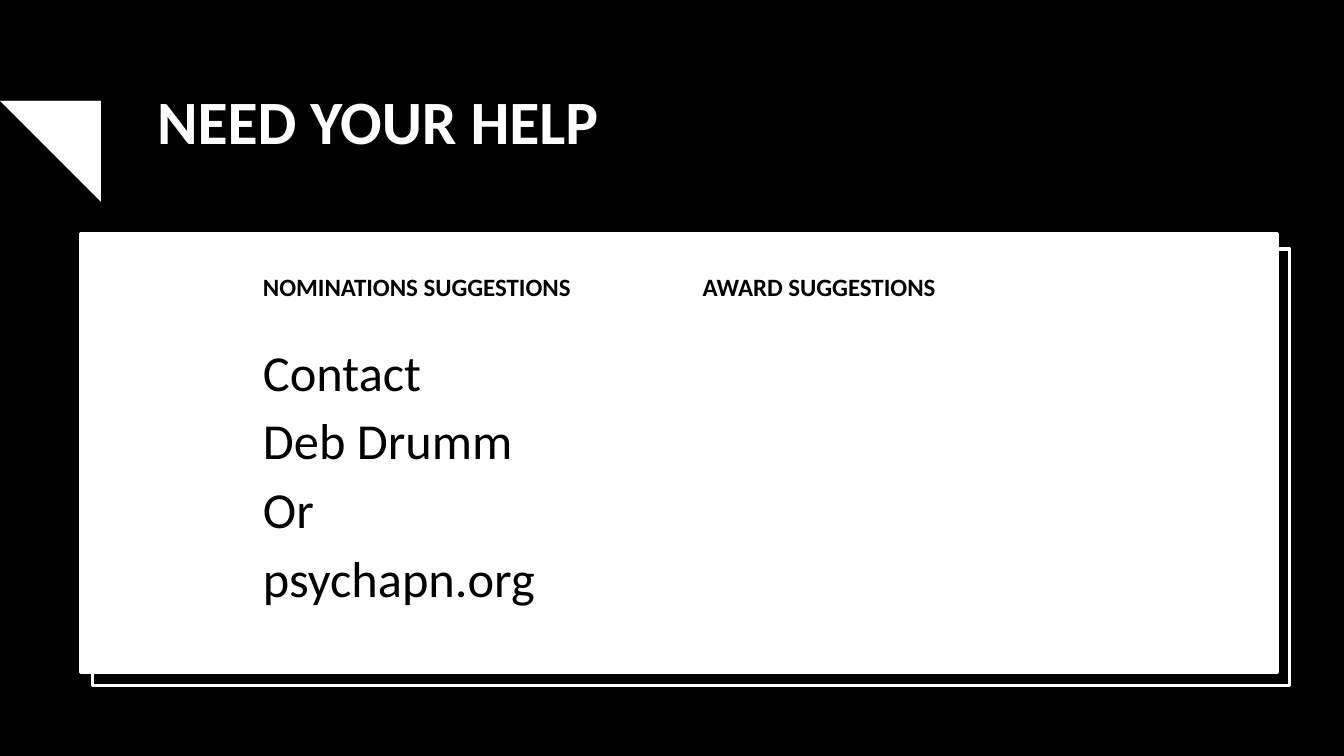
from pptx import Presentation
from pptx.dml.color import RGBColor
from pptx.enum.shapes import MSO_SHAPE as Preset
from pptx.enum.text import MSO_ANCHOR as Anchor
from pptx.util import Inches, Pt

BLACK = RGBColor(0, 0, 0)
WHITE = RGBColor(255, 255, 255)
FONT = "Calibri"
WIDTH, HEIGHT = 13.33, 7.5

TITLE = {"size": Pt(44), "bold": True}
HEADING = {"size": Pt(17.8), "bold": True}
BODY = {"size": Pt(36), "bold": False}

# Outline of one zigzag stripe, relative to its top left corner
PEAKS = (0.5, 1.01)
VALLEYS = (0.24, 0.75)
DEPTH, THICKNESS = 0.26, 0.045


def add_rectangle(page, box, fill, line=None):
    panel = page.shapes.add_shape(Preset.RECTANGLE, *map(Inches, box))
    panel.shadow.inherit = False
    panel.fill.solid()
    panel.fill.fore_color.rgb = fill
    if line is None:
        panel.line.fill.background()
    else:
        panel.line.color.rgb = line
        panel.line.width = Pt(2.25)


def add_text(page, box, lines, style, color, anchor=Anchor.TOP, **spacing):
    frame = page.shapes.add_textbox(*map(Inches, box)).text_frame
    frame.word_wrap = True
    frame.vertical_anchor = anchor
    for index, line in enumerate(lines):
        para = frame.paragraphs[0] if index == 0 else frame.add_paragraph()
        for name, value in spacing.items():
            setattr(para, name, value)
        span = para.add_run()
        span.text = line
        span.font.color.rgb = color
        for name, value in {"name": FONT, **style}.items():
            setattr(span.font, name, value)


def add_zigzag(page, left, top):
    """Draw a stripe that runs in from the left edge of its box."""
    turns = sorted([(x, 0) for x in PEAKS] + [(x, DEPTH) for x in VALLEYS])
    upper = [(0, 0.03), *turns, (1.28, 0.27)]
    lower = [(0, 0.07), *((x, y + THICKNESS) for x, y in turns), (1.26, 0.29)]
    points = [(left + x, top + y) for x, y in upper + lower[::-1]]
    builder = page.shapes.build_freeform(*points[0], scale=Inches(1))
    builder.add_line_segments(points[1:], close=True)
    stripe = builder.convert_to_shape()
    stripe.shadow.inherit = False
    stripe.fill.solid()
    stripe.fill.fore_color.rgb = WHITE
    stripe.line.fill.background()


def add_header(page, left, top, width, height):
    add_text(page, (left + 1.46, top, width - 1.46, height), ["NEED YOUR HELP"],
             TITLE, WHITE, Anchor.MIDDLE, line_spacing=0.9)
    for offset in (0.12, 0.6):
        add_zigzag(page, left, top + offset)


def add_card(page, left, top, width, height):
    """Draw the white card over its outlined frame, with two columns."""
    add_rectangle(page, (left + 0.12, top + 0.15, width, height - 0.02), BLACK, WHITE)
    add_rectangle(page, (left, top, width, height), WHITE, WHITE)
    columns = [
        ("NOMINATIONS SUGGESTIONS", ["Contact", "Deb Drumm", "Or", "psychapn.org"]),
        ("AWARD SUGGESTIONS", []),
    ]
    for index, (heading, lines) in enumerate(columns):
        x = left + 1.71 + index * 4.36
        add_text(page, (x, top + 0.33, 4.22, 0.67), [heading],
                 HEADING, BLACK, space_after=Pt(6))
        if lines:
            add_text(page, (x, top + 1.01, 4.22, 3.01), lines,
                     BODY, BLACK, space_after=Pt(6))


def main():
    deck = Presentation()
    deck.slide_width, deck.slide_height = Inches(WIDTH), Inches(HEIGHT)
    page = deck.slides.add_slide(deck.slide_layouts[6])
    add_rectangle(page, (0, 0, WIDTH, HEIGHT), BLACK)
    add_header(page, 0, 0.62, 12.12, 1.23)
    add_card(page, 0.8, 2.32, 11.87, 4.35)
    deck.save("out.pptx")


if __name__ == "__main__":
    main()
